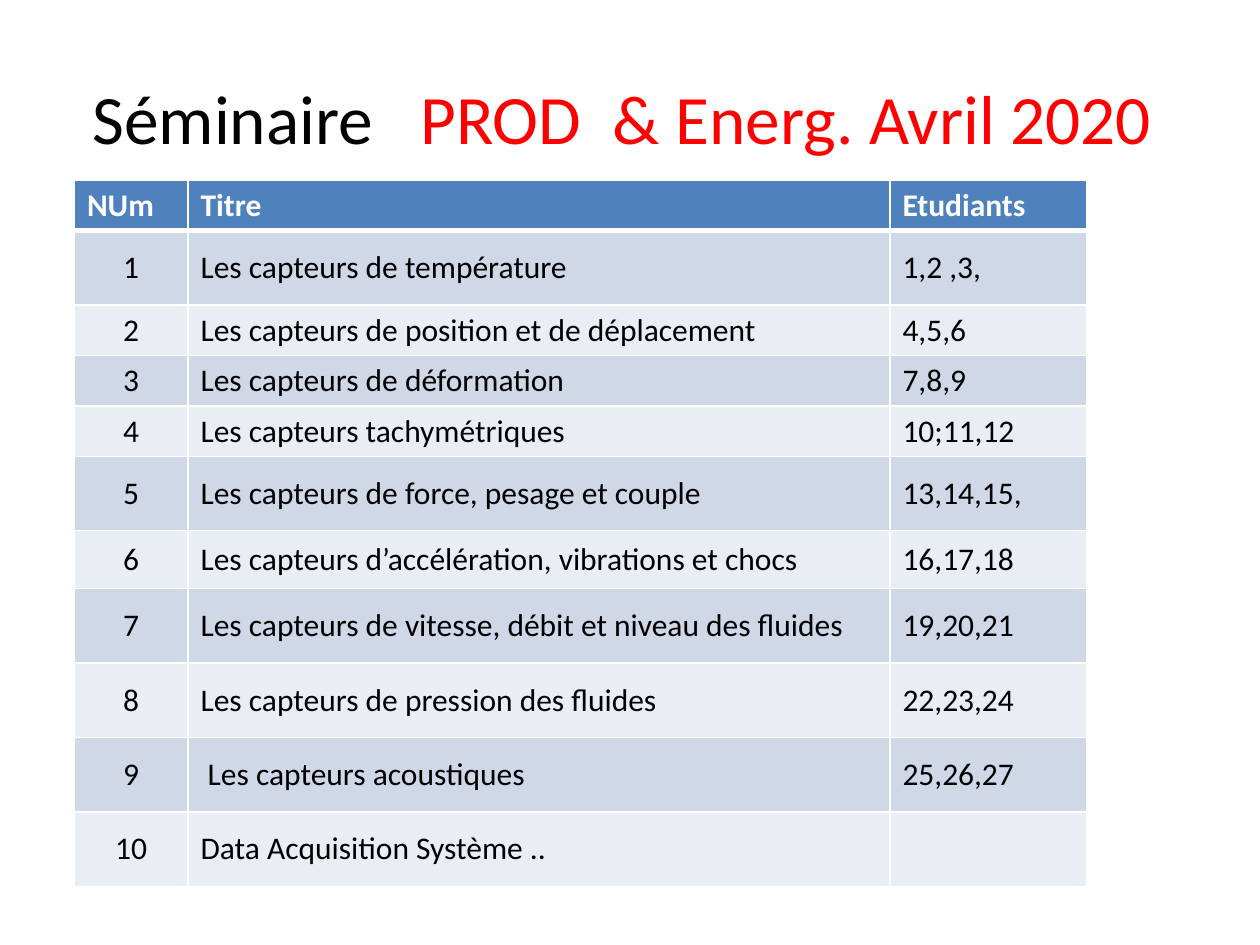
from dataclasses import dataclass

from lxml.etree import SubElement
from pptx import Presentation
from pptx.dml.color import RGBColor
from pptx.enum.text import MSO_ANCHOR, PP_ALIGN
from pptx.oxml.ns import qn
from pptx.util import Cm, Pt

FONT = "Calibri"
BLACK, WHITE, RED = "000000", "FFFFFF", "FF0000"
HEADER_FILL, BANDS = "4F81BD", ("D0D8E8", "E9EDF4")
COLUMN_WIDTHS = (2.29, 14.15, 3.96)
HEADERS = ("NUm", "Titre", "Etudiants")
SHORT, MEDIUM, TALL = 0.86, 1.17, 1.5


@dataclass
class Seminar:
    title: str
    students: str
    height: float = TALL


SEMINARS = [
    Seminar("Les capteurs de température", "1,2 ,3,"),
    Seminar("Les capteurs de position et de déplacement", "4,5,6", SHORT),
    Seminar("Les capteurs de déformation", "7,8,9", SHORT),
    Seminar("Les capteurs tachymétriques", "10;11,12", SHORT),
    Seminar("Les capteurs de force, pesage et couple", "13,14,15,"),
    Seminar("Les capteurs d’accélération, vibrations et chocs", "16,17,18", MEDIUM),
    Seminar("Les capteurs de vitesse, débit et niveau des fluides", "19,20,21"),
    Seminar("Les capteurs de pression des fluides", "22,23,24"),
    Seminar(" Les capteurs acoustiques", "25,26,27"),
    Seminar("Data Acquisition Système ..", ""),
]


def paint(color_format, color: str) -> None:
    color_format.rgb = RGBColor.from_string(color)


def add_run(p, text: str, size: float, color: str, bold: bool = False) -> None:
    r = p.add_run()
    r.text = text
    r.font.name, r.font.size, r.font.bold = FONT, Pt(size), bold
    paint(r.font.color, color)


def add_borders(cell, bottom: float) -> None:
    tc_pr = cell._tc.get_or_add_tcPr()
    for side, width in (("L", 1), ("R", 1), ("T", 1), ("B", bottom)):
        line = SubElement(tc_pr, qn(f"a:ln{side}"), w=str(Pt(width)))
        SubElement(SubElement(line, qn("a:solidFill")), qn("a:srgbClr"), val=WHITE)


def fill_row(table, index: int, texts: tuple[str, ...], height: float) -> None:
    header = index == 0
    table.rows[index].height = Cm(height)
    for column, text in enumerate(texts):
        cell = table.cell(index, column)
        add_borders(cell, 3 if header else 1)
        cell.fill.solid()
        paint(cell.fill.fore_color, HEADER_FILL if header else BANDS[(index - 1) % 2])
        cell.vertical_anchor = MSO_ANCHOR.TOP if header else MSO_ANCHOR.MIDDLE
        p = cell.text_frame.paragraphs[0]
        if column == 0 and not header:
            p.alignment = PP_ALIGN.CENTER
        if text:
            add_run(p, text, 18, WHITE if header else BLACK, header)


def add_title(s) -> None:
    tf = s.shapes.add_textbox(Cm(1.27), Cm(0.76), Cm(22.86), Cm(3.18)).text_frame
    tf.word_wrap = True
    tf.vertical_anchor = MSO_ANCHOR.MIDDLE
    p = tf.paragraphs[0]
    p.alignment = PP_ALIGN.CENTER
    add_run(p, "Séminaire   ", 39.6, BLACK)
    add_run(p, "PROD  & Energ. Avril 2020 ", 39.6, RED)


def add_seminar_table(s) -> None:
    height = SHORT + sum(seminar.height for seminar in SEMINARS)
    table = s.shapes.add_table(
        len(SEMINARS) + 1, len(HEADERS), Cm(1.5), Cm(3.63),
        Cm(sum(COLUMN_WIDTHS)), Cm(height),
    ).table
    for column, width in zip(table.columns, COLUMN_WIDTHS):
        column.width = Cm(width)
    fill_row(table, 0, HEADERS, SHORT)
    for number, seminar in enumerate(SEMINARS, 1):
        texts = (str(number), seminar.title, seminar.students)
        fill_row(table, number, texts, seminar.height)


def main() -> None:
    """Build the seminar schedule slide."""
    prs = Presentation()
    prs.slide_width, prs.slide_height = Cm(25.4), Cm(19.05)
    s = prs.slides.add_slide(prs.slide_layouts[6])
    add_title(s)
    add_seminar_table(s)
    prs.save("out.pptx")


if __name__ == "__main__":
    main()
